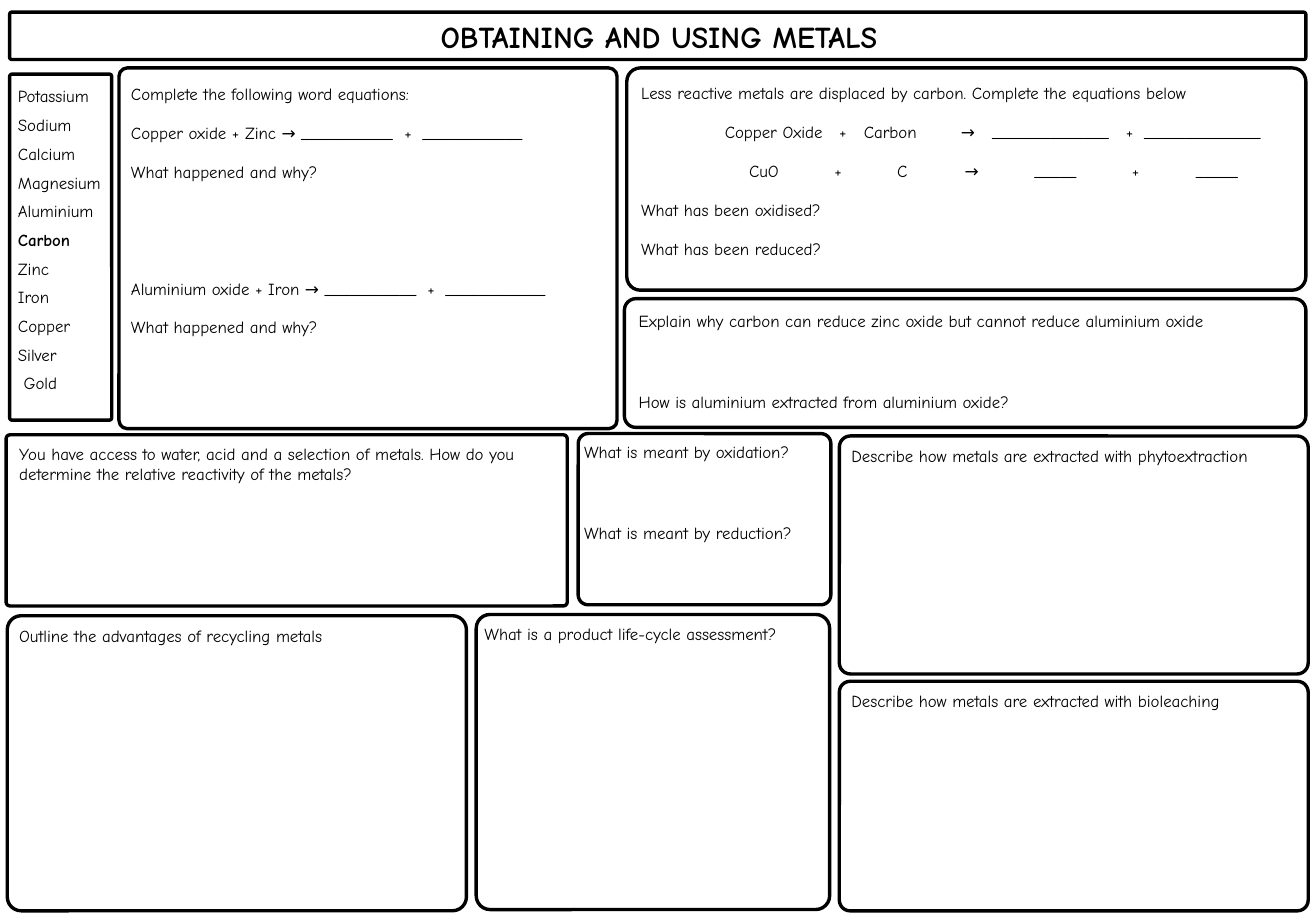
from lxml.etree import SubElement
from pptx import Presentation
from pptx.dml.color import RGBColor
from pptx.enum.shapes import MSO_SHAPE
from pptx.enum.text import MSO_AUTO_SIZE, PP_ALIGN
from pptx.oxml.ns import qn
from pptx.util import Inches, Pt

INK = "000000"
FONT = "Comic Neue"


def color(code):
    return RGBColor.from_string(code)


def write(box, lines, gap=5, spacing=1.0, size=10):
    """Add a text box with one paragraph per line and return its paragraphs."""
    frame = slide.shapes.add_textbox(*map(Inches, box)).text_frame
    frame.word_wrap = True
    frame.auto_size = MSO_AUTO_SIZE.SHAPE_TO_FIT_TEXT
    for i, line in enumerate(lines):
        para = frame.paragraphs[0] if i == 0 else frame.add_paragraph()
        para.text = line
        para.line_spacing = spacing
        para.space_before = Pt(gap)
        for run in para.runs:
            run.font.name = FONT
            run.font.size = Pt(size)
            run.font.color.rgb = color(INK)
    return frame.paragraphs


deck = Presentation()
deck.slide_width = Inches(65 / 6)  # standard A4 slide width
deck.slide_height = Inches(7.6)
slide = deck.slides.add_slide(deck.slide_layouts[6])

# Panels: left, top, width, height, corner rounding
panels = [
    (0.08, 0.10, 10.67, 0.39, 0.045),
    (0.08, 0.61, 0.84, 2.85, 0.023),
    (0.98, 0.56, 4.10, 2.97, 0.023),
    (5.16, 0.56, 5.59, 1.83, 0.061),
    (5.14, 2.46, 5.61, 1.06, 0.089),
    (0.05, 3.58, 4.62, 1.41, 0.023),
    (4.76, 3.57, 2.08, 1.41, 0.058),
    (6.91, 3.59, 3.86, 1.96, 0.047),
    (6.91, 5.61, 3.86, 1.89, 0.047),
    (0.06, 5.07, 3.78, 2.43, 0.047),
    (3.92, 5.06, 2.91, 2.43, 0.047),
]
for *box, bend in panels:
    panel = slide.shapes.add_shape(MSO_SHAPE.ROUNDED_RECTANGLE, *map(Inches, box))
    panel.adjustments[0] = bend
    panel.shadow.inherit = False
    panel.fill.background()
    panel.line.color.rgb = color(INK)
    panel.line.width = Pt(2)

# Title
title = write((0.08, 0.1, 10.69, 0.4), ["OBTAINING AND USING METALS"], gap=9, size=18)[0]
title.alignment = PP_ALIGN.CENTER
title.runs[0].font.bold = True

# Reactivity series
metals = ["Potassium", "Sodium", "Calcium", "Magnesium", "Aluminium", "Carbon",
          "Zinc", "Iron", "Copper", "Silver", " Gold"]
series = write((0.05, 0.66, 0.96, 2.79), metals)
series[metals.index("Carbon")].runs[0].font.bold = True

# Equations
words = write((0.98, 0.56, 4.15, 2.71), [
    "Complete the following word equations:",
    "Copper oxide + Zinc → ___________\t+\t____________",
    "What happened and why?",
    "Aluminium oxide + Iron → ___________\t+\t____________",
    "What happened and why?",
], spacing=1.5)
words[3].space_before = Pt(51)

carbon = write((5.18, 0.55, 5.99, 1.7), [
    "Less reactive metals are displaced by carbon. Complete the equations below",
    "\tCopper Oxide\t+\tCarbon\t→\t______________\t+\t______________",
    "\tCuO\t+\tC\t→\t_____\t+\t_____",
    "What has been oxidised?",
    "What has been reduced?",
], spacing=1.5)

stops = [
    (words[1], "l", (2.25, 2.4)),
    (words[3], "l", (2.44, 2.59)),
    (carbon[1], "ctr", (1.09, 1.66, 2.05, 2.69, 3.37, 4.02, 4.62)),
    (carbon[2], "ctr", (1.01, 1.62, 2.15, 2.72, 3.41, 4.07, 4.74)),
]
for para, side, places in stops:
    tabs = SubElement(para._p.get_or_add_pPr(), qn("a:tabLst"))
    for place in places:
        SubElement(tabs, qn("a:tab"), pos=str(Inches(place)), algn=side)

# Pairs of questions with room for an answer between
pairs = [
    ((5.16, 2.51, 5.59, 0.94),
     "Explain why carbon can reduce zinc oxide but cannot reduce aluminium oxide",
     "How is aluminium extracted from aluminium oxide?"),
    ((4.71, 3.59, 2.56, 0.94),
     "What is meant by oxidation?", "What is meant by reduction?"),
]
for box, *asks in pairs:
    write(box, asks, gap=0)[1].space_before = Pt(36)

# Single questions
tasks = [
    ((0.06, 3.6, 4.62, 0.44), "You have access to water, acid and a selection of metals. "
     "How do you determine the relative reactivity of the metals?"),
    ((6.91, 3.62, 3.98, 0.27), "Describe how metals are extracted with phytoextraction"),
    ((6.91, 5.64, 3.98, 0.27), "Describe how metals are extracted with bioleaching"),
    ((0.06, 5.1, 3.75, 0.27), "Outline the advantages of recycling metals"),
    ((3.89, 5.09, 3.1, 0.27), "What is a product life-cycle assessment?"),
]
for box, task in tasks:
    write(box, [task])

deck.save("out.pptx")
